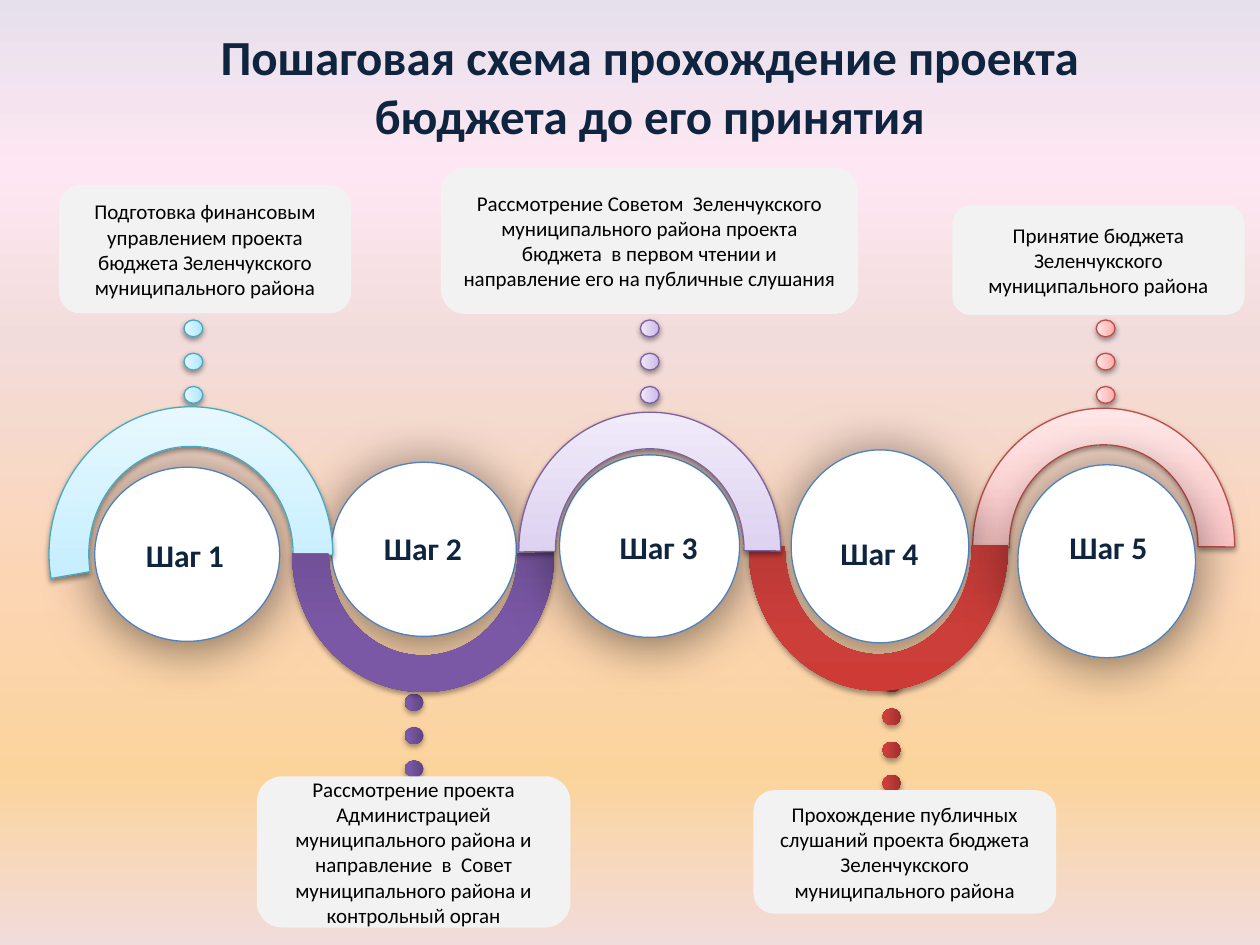
"""Builds the slide with the five steps of adopting a district budget."""
from lxml import etree
from pptx import Presentation
from pptx import util as u
from pptx.dml import color
from pptx.enum import shapes, text
from pptx.oxml import ns

rgb = color.RGBColor.from_string
NAVY, BLACK, WHITE = rgb("0F243E"), rgb("000000"), rgb("FFFFFF")
PANEL, CIRCLE_EDGE = rgb("F2F2F2"), rgb("4F81BD")
SKY_EDGE, LILAC_EDGE, PINK_EDGE = rgb("46AAC5"), rgb("7D60A0"), rgb("BF4C48")

BACKDROP = [(0, rgb("E6E0EC")), (18, rgb("FEE7F2")), (36, rgb("F2DCDB")),
            (61, rgb("FCD5B5")), (82, rgb("FBD49C")), (100, rgb("F2DCDB"))]
SKY = [(0, rgb("A7E6FF")), (35, rgb("C1EDFF")), (100, rgb("E7F8FF"))]
LILAC = [(0, rgb("C9B5E8")), (35, rgb("D8CBEE")), (100, rgb("F0EAF9"))]
PINK = [(0, rgb("FFA6A5")), (35, rgb("FFC0BF")), (100, rgb("FFE7E7"))]
PURPLE = [(0, rgb("5F4480")), (80, rgb("7B58A6")), (100, rgb("7C57A8"))]
RED = [(0, rgb("9C2F2D")), (80, rgb("CB3E3A")), (100, rgb("CE3B37"))]

LIGHT_SHADOW = (38, 3.1, 1.6)
DARK_SHADOW = (35, 3.1, 1.8)
WIDE_SHADOW = (52, 31, 3)


class StepSlide:
    """Holds the style and the slide, and draws each kind of element."""

    font = "Calibri"
    dot_width, dot_height, dot_pitch = 0.34, 0.38, 0.67

    def __init__(self, slide):
        self.slide = slide

    def gradient(self, fill, stops, angle):
        fill.gradient()
        fill.gradient_angle = angle
        stop_list = fill.gradient_stops[0]._gs.getparent()
        for old in list(stop_list):
            stop_list.remove(old)
        for place, shade in stops:
            stop = etree.SubElement(stop_list, ns.qn("a:gs"), pos=str(place * 1000))
            etree.SubElement(stop, ns.qn("a:srgbClr"), val=str(shade))

    def shadow(self, item, opacity, blur, distance):
        effects = item._element.spPr.find(ns.qn("a:effectLst"))
        outer = etree.SubElement(effects, ns.qn("a:outerShdw"), blurRad=str(u.Pt(blur)),
                                 dist=str(u.Pt(distance)), dir="5400000", rotWithShape="0")
        shade = etree.SubElement(outer, ns.qn("a:srgbClr"), val=str(BLACK))
        etree.SubElement(shade, ns.qn("a:alpha"), val=str(opacity * 1000))

    def shape(self, kind, frame, fill, edge=None, shadow=None, rotation=0, parent=None):
        holder = parent or self.slide
        item = holder.shapes.add_shape(kind, *map(u.Cm, frame))
        item.rotation = rotation
        item.shadow.inherit = False
        if isinstance(fill, list):
            self.gradient(item.fill, fill, 90)
        else:
            item.fill.solid()
            item.fill.fore_color.rgb = fill
        if edge is None:
            item.line.fill.background()
        else:
            item.line.color.rgb = edge
            item.line.width = u.Pt(0.75)
        if shadow:
            self.shadow(item, *shadow)
        return item

    def set_words(self, item, words, size, shade, bold=False, align=None):
        item.text_frame.text = words
        for paragraph in item.text_frame.paragraphs:
            paragraph.alignment = align
            for run in paragraph.runs:
                run.font.name = self.font
                run.font.size = u.Pt(size)
                run.font.bold = bold
                run.font.color.rgb = shade

    def dots(self, left, top, count, stops, edge=None):
        trail = self.slide.shapes.add_group_shape()
        shadow = LIGHT_SHADOW if edge else DARK_SHADOW
        for index in range(count):
            frame = (left, top + index * self.dot_pitch, self.dot_width, self.dot_height)
            self.shape(shapes.MSO_SHAPE.OVAL, frame, stops, edge, shadow, 270, trail)

    def circle(self, *frame):
        self.shape(shapes.MSO_SHAPE.OVAL, frame, WHITE, CIRCLE_EDGE, WIDE_SHADOW)

    def arc(self, frame, stops, edge=None, start=107.5):
        shadow, rotation = (LIGHT_SHADOW, 0) if edge else (DARK_SHADOW, 180)
        band = self.shape(shapes.MSO_SHAPE.BLOCK_ARC, frame, stops, edge, shadow, rotation)
        for index, value in enumerate((start, 0.23, 0.14)):
            band.adjustments[index] = value

    def panel(self, frame, words):
        box = self.shape(shapes.MSO_SHAPE.ROUNDED_RECTANGLE, frame, PANEL)
        box.text_frame.word_wrap = True
        box.text_frame.vertical_anchor = text.MSO_ANCHOR.MIDDLE
        self.set_words(box, words, 12, BLACK, align=text.PP_ALIGN.CENTER)

    def label(self, left, top, words):
        box = self.slide.shapes.add_textbox(*map(u.Cm, (left, top, 2.11, 1.02)))
        box.text_frame.word_wrap = False
        self.set_words(box, words, 18, NAVY, bold=True)

    def title(self, frame, words):
        box = self.slide.shapes.add_textbox(*map(u.Cm, frame))
        box.text_frame.word_wrap = True
        box.text_frame.vertical_anchor = text.MSO_ANCHOR.MIDDLE
        self.set_words(box, words, 28, NAVY, bold=True, align=text.PP_ALIGN.CENTER)


def main():
    deck = Presentation()
    deck.slide_width, deck.slide_height = u.Cm(25.4), u.Cm(19.05)
    steps = StepSlide(deck.slides.add_slide(deck.slide_layouts[6]))
    steps.gradient(steps.slide.background.fill, BACKDROP, 270)

    steps.dots(22.12, 6.43, 3, PINK, PINK_EDGE)
    steps.dots(8.18, 13.97, 3, PURPLE)
    steps.dots(12.93, 6.43, 3, LILAC, LILAC_EDGE)
    steps.dots(17.81, 13.59, 4, RED)
    steps.dots(3.73, 6.43, 3, SKY, SKY_EDGE)

    steps.circle(6.68, 9.32, 3.73, 3.51)
    steps.circle(1.91, 9.42, 3.73, 3.51)
    steps.arc((0.99, 8.2, 5.72, 5.94), SKY, SKY_EDGE, start=102.06)
    steps.arc((5.89, 8.41, 5.28, 5.54), PURPLE)
    steps.circle(11.28, 9.17, 3.63, 3.68)
    steps.arc((19.61, 8.23, 5.28, 5.56), PINK, PINK_EDGE)
    steps.circle(15.95, 9.07, 3.58, 3.89)
    steps.arc((15.09, 8.13, 5.23, 5.79), RED)
    steps.circle(20.52, 9.37, 3.58, 3.89)
    steps.arc((10.46, 8.31, 5.28, 5.56), LILAC, LILAC_EDGE)

    for frame, words in [
        ((1.19, 3.73, 5.89, 2.59),
         "Подготовка финансовым управлением проекта бюджета Зеленчукского\n"
         "муниципального района"),
        ((8.89, 3.38, 8.41, 2.95),
         "Рассмотрение Советом  Зеленчукского муниципального района проекта "
         "бюджета  в первом чтении и\nнаправление его на публичные слушания"),
        ((5.18, 15.65, 6.32, 3.05),
         "Рассмотрение проекта Администрацией муниципального района и "
         "направление  в  Совет муниципального района и контрольный орган"),
        ((15.19, 15.93, 6.1, 2.49),
         "Прохождение публичных слушаний проекта бюджета Зеленчукского "
         "муниципального района"),
        ((19.2, 4.14, 5.89, 2.21),
         "Принятие бюджета Зеленчукского муниципального района"),
    ]:
        steps.panel(frame, words)

    label_places = [(2.69, 10.69), (7.49, 10.54), (12.24, 10.52), (16.69, 10.64), (21.31, 10.52)]
    for number, place in enumerate(label_places, start=1):
        steps.label(*place, f"Шаг {number}")
    steps.title((3.1, 0.53, 19.99, 2.39),
                "Пошаговая схема прохождение проекта бюджета до его принятия")
    deck.save("out.pptx")


if __name__ == "__main__":
    main()
